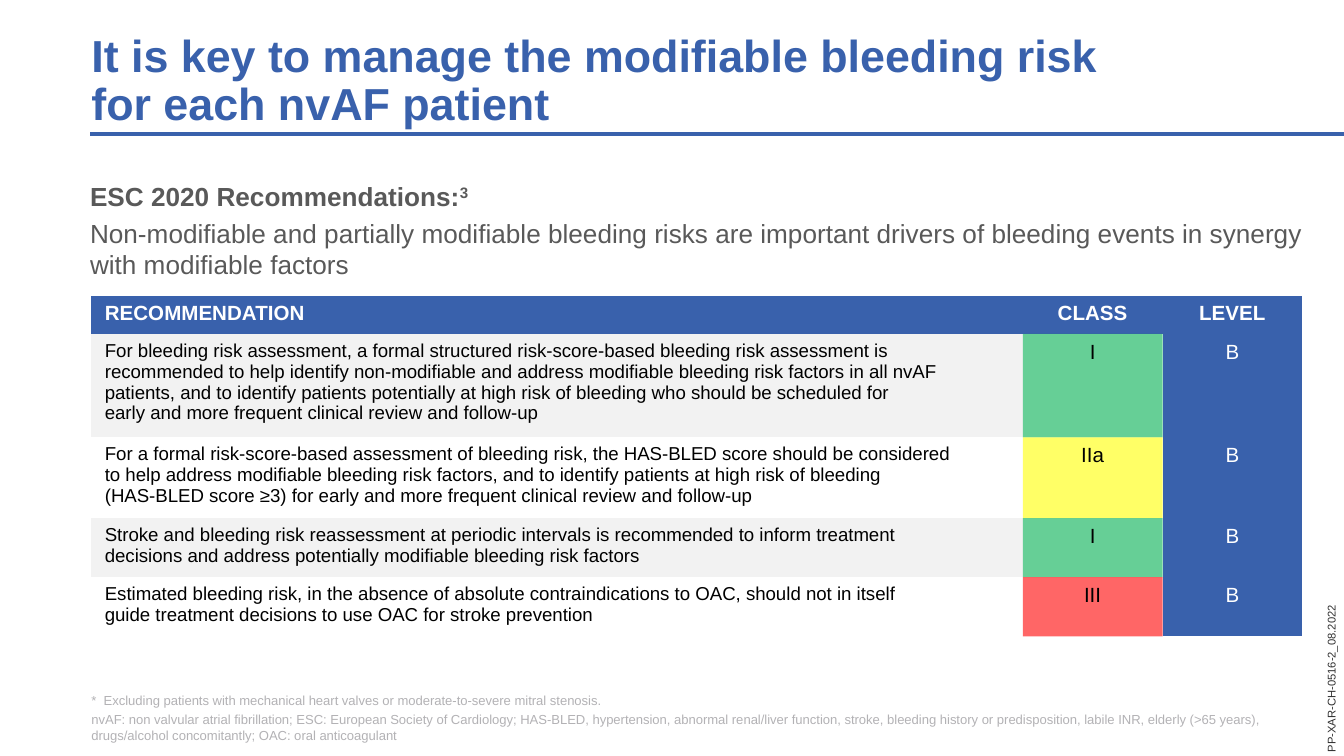
from lxml.etree import SubElement
from pptx import Presentation
from pptx.dml.color import RGBColor
from pptx.enum.shapes import MSO_CONNECTOR as Connector
from pptx.enum.text import MSO_ANCHOR as Anchor, PP_ALIGN as Align
from pptx.oxml.ns import qn
from pptx.util import Inches, Pt

BLUE, GREY, LIGHT, WHITE, BLACK = "3961AC", "595959", "F2F2F2", "FFFFFF", "000000"
GREEN, YELLOW, RED = "00B050", "FFFF00", "FF0000"
SLIDE_WIDTH = Inches(10)
SLIDE_HEIGHT = SLIDE_WIDTH * 9 // 16
NO_GRID_STYLE = "{2D5ABB26-0587-4C30-8999-92F81FD0307C}"
COLUMN_WIDTHS = [6.93, 1.04, 1.04]
ROW_HEIGHTS = [0.28, 0.77, 0.6, 0.44, 0.44]
HEADINGS = ["RECOMMENDATION", "CLASS", "LEVEL"]
RECOMMENDATIONS = [
    ("For bleeding risk assessment, a formal structured risk-score-based bleeding risk "
     "assessment is recommended to help identify non-modifiable and address modifiable "
     "bleeding risk factors in all nvAF \n"
     "patients, and to identify patients potentially at high risk of bleeding who should "
     "be scheduled for \nearly and more frequent clinical review and follow-up",
     "I", GREEN),
    ("For a formal risk-score-based assessment of bleeding risk, the HAS-BLED score "
     "should be considered \nto help address modifiable bleeding risk factors, and to "
     "identify patients at high risk of bleeding \n(HAS-BLED score ≥3) for early and more "
     "frequent clinical review and follow-up",
     "IIa", YELLOW),
    ("Stroke and bleeding risk reassessment at periodic intervals is recommended to "
     "inform treatment \ndecisions and address potentially modifiable bleeding risk factors",
     "I", GREEN),
    ("Estimated bleeding risk, in the absence of absolute contraindications to OAC, "
     "should not in itself \nguide treatment decisions to use OAC for stroke prevention",
     "III", RED),
]


def color(value):
    return RGBColor.from_string(value)


def apply(target, formats):
    for name, value in formats.items():
        setattr(target, name, value)


def style_run(run, size, ink, bold=False):
    apply(run.font, {"name": "Arial", "size": Pt(size), "bold": bold})
    run.font.color.rgb = color(ink)


def write(paragraph, text, size, ink, bold=False, **formats):
    paragraph.text = text
    apply(paragraph, formats)
    for run in paragraph.runs:
        style_run(run, size, ink, bold)


def add_text(slide, box, paragraphs, inset=0, anchor=Anchor.TOP):
    """Add a text box; each paragraph is a dict of arguments for write()."""
    holder = slide.shapes.add_textbox(*map(Inches, box))
    frame = holder.text_frame
    apply(frame, {"word_wrap": True, "vertical_anchor": anchor,
                  "margin_left": Inches(inset), "margin_right": Inches(inset),
                  "margin_top": Inches(inset / 2), "margin_bottom": Inches(inset / 2)})
    for index, content in enumerate(paragraphs):
        write(frame.add_paragraph() if index else frame.paragraphs[0], **content)
    return holder


def add_rule(slide, start, end):
    rule = slide.shapes.add_connector(Connector.STRAIGHT, *map(Inches, start + end))
    rule.line.color.rgb = color(BLUE)
    rule.line.width = Pt(2.25)
    SubElement(rule._element.spPr, qn("a:effectLst"))


def fill_cell(cell, fill, opacity=100):
    if fill is None:
        cell.fill.background()
        return
    cell.fill.solid()
    cell.fill.fore_color.rgb = color(fill)
    if opacity < 100:
        tint = cell._tc.tcPr.find(".//" + qn("a:srgbClr"))
        SubElement(tint, qn("a:alpha"), val=str(opacity * 1000))


def write_cell(cell, text, size, ink, fill, opacity=100, bold=False, align=Align.CENTER):
    fill_cell(cell, fill, opacity)
    write(cell.text_frame.paragraphs[0], text, size, ink, bold, alignment=align)


def add_recommendations(slide):
    frame = slide.shapes.add_table(
        len(ROW_HEIGHTS), len(COLUMN_WIDTHS), Inches(0.68), Inches(2.2),
        Inches(sum(COLUMN_WIDTHS)), Inches(sum(ROW_HEIGHTS)))
    table = frame.table
    apply(table, {"first_row": False, "horz_banding": False})
    table._tbl.tblPr.find(qn("a:tableStyleId")).text = NO_GRID_STYLE
    for column, width in zip(table.columns, COLUMN_WIDTHS):
        column.width = Inches(width)
    for row, height in zip(table.rows, ROW_HEIGHTS):
        row.height = Inches(height)
    for index, heading in enumerate(HEADINGS):
        write_cell(table.cell(0, index), heading, 11, WHITE, BLUE, bold=True,
                   align=Align.CENTER if index else Align.LEFT)
    for index, (advice, grade, grade_fill) in enumerate(RECOMMENDATIONS, 1):
        band = LIGHT if index % 2 else None
        write_cell(table.cell(index, 0), advice, 10, BLACK, band, align=Align.LEFT)
        write_cell(table.cell(index, 1), grade, 11, BLACK, grade_fill, opacity=60)
        write_cell(table.cell(index, 2), "B", 11, WHITE, BLUE)


def add_introduction(slide):
    shared = {"size": 14, "ink": GREY, "space_before": Pt(3)}
    introduction = add_text(slide, (0.67, 1.34, 9.06, 0.75), [
        {"text": "ESC 2020 Recommendations:", "bold": True, **shared},
        {"text": "Non-modifiable and partially modifiable bleeding risks are important "
                 "drivers of bleeding events in synergy with modifiable factors", **shared}])
    reference = introduction.text_frame.paragraphs[0].add_run()
    reference.text = "3"
    style_run(reference, 14, GREY, bold=True)
    reference.font._element.set("baseline", "30000")


def add_footnotes(slide):
    notes = [
        "*  Excluding patients with mechanical heart valves or moderate-to-severe mitral stenosis.",
        "nvAF: non valvular atrial fibrillation; ESC: European Society of Cardiology; HAS-BLED, "
        "hypertension, abnormal renal/liver function, stroke, bleeding history or predisposition, "
        "labile INR, elderly (>65 years), drugs/alcohol concomitantly; OAC: oral anticoagulant",
    ]
    add_text(slide, (0.68, 5.15, 9.05, 0.38),
             [{"text": note, "size": 7, "ink": "B3B2B5", "space_after": Pt(2)}
              for note in notes], anchor=Anchor.BOTTOM)


def main():
    deck = Presentation()
    apply(deck, {"slide_width": SLIDE_WIDTH, "slide_height": SLIDE_HEIGHT})
    slide = deck.slides.add_slide(deck.slide_layouts[6])
    add_rule(slide, (0.67, 1), (10, 1))
    add_text(slide, (0.68, 0.24, 9.05, 0.73), [
        {"text": "It is key to manage the modifiable bleeding risk \nfor each nvAF patient",
         "size": 24, "ink": BLUE, "bold": True, "line_spacing": 0.9}], anchor=Anchor.BOTTOM)
    add_footnotes(slide)
    add_introduction(slide)
    add_recommendations(slide)
    document_code = add_text(slide, (8.96, 4.65, 1.89, 0.2), [
        {"text": "PP-XAR-CH-0516-2_08.2022", "size": 6, "ink": "303030"}], inset=0.1)
    document_code.rotation = 270
    deck.save("out.pptx")


if __name__ == "__main__":
    main()
